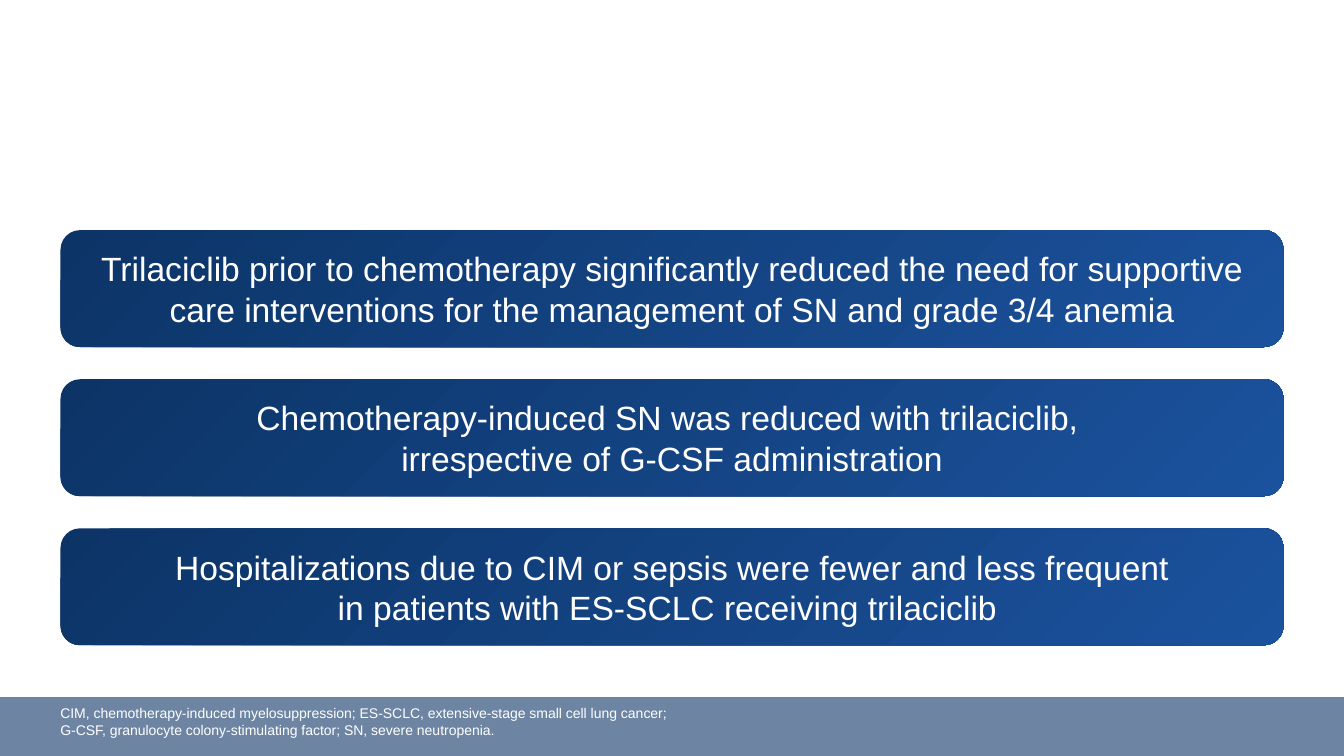
"""Build the slide of three key conclusions about trilaciclib."""
from dataclasses import dataclass

from lxml import etree
from pptx import Presentation
from pptx.dml.color import RGBColor
from pptx.enum.shapes import MSO_SHAPE
from pptx.enum.text import MSO_ANCHOR, MSO_AUTO_SIZE, PP_ALIGN
from pptx.oxml.ns import qn
from pptx.util import Pt

RECTANGLE = MSO_SHAPE.RECTANGLE
ROUNDED_RECTANGLE = MSO_SHAPE.ROUNDED_RECTANGLE
TOP, MIDDLE = MSO_ANCHOR.TOP, MSO_ANCHOR.MIDDLE
LEFT, CENTER = PP_ALIGN.LEFT, PP_ALIGN.CENTER
GROW = MSO_AUTO_SIZE.SHAPE_TO_FIT_TEXT
BLANK_LAYOUT = 6

SLIDE_WIDTH, SLIDE_HEIGHT = 960, 540
FOOTER_TOP = 498
CARD_LEFT, CARD_TOP, CARD_HEIGHT, CARD_PITCH = 43.2, 164.4, 83.5, 106.5

CONCLUSIONS = (
    "Trilaciclib prior to chemotherapy significantly reduced the need for supportive "
    "care interventions for the management of SN and grade 3/4 anemia",
    "Chemotherapy-induced SN was reduced with trilaciclib, \n"
    "irrespective of G-CSF administration",
    "Hospitalizations due to CIM or sepsis were fewer and less frequent\n"
    "in patients with ES-SCLC receiving trilaciclib ",
)
ABBREVIATIONS = (
    "CIM, chemotherapy-induced myelosuppression; "
    "ES-SCLC, extensive-stage small cell lung cancer; \n"
    "G-CSF, granulocyte colony-stimulating factor; SN, severe neutropenia."
)


@dataclass(frozen=True)
class Theme:
    """Colours, font and type sizes of the slide."""

    navy: RGBColor = RGBColor(0x0C, 0x34, 0x67)
    blue: RGBColor = RGBColor(0x1B, 0x52, 0x9D)
    white: RGBColor = RGBColor(0xFF, 0xFF, 0xFF)
    font: str = "Arial"
    card_size: float = 24
    footnote_size: float = 10
    footer_opacity: int = 60


THEME = Theme()


def write_text(shape, text, *, size, align=LEFT, anchor=TOP, inset=3.6):
    """Write one white paragraph, with line breaks, into a shape."""
    frame = shape.text_frame
    frame.word_wrap = True
    frame.auto_size = GROW
    frame.vertical_anchor = anchor
    frame.margin_top = frame.margin_bottom = Pt(inset)
    paragraph = frame.paragraphs[0]
    paragraph.alignment = align
    for index, line in enumerate(text.split("\n")):
        if index:
            paragraph.add_line_break()
        run = paragraph.add_run()
        run.text = line
        run.font.name = THEME.font
        run.font.size = Pt(size)
        run.font.color.rgb = THEME.white


def add_panel(slide, kind, left, top, width, height):
    """Add a preset shape without line or shadow."""
    shape = slide.shapes.add_shape(kind, Pt(left), Pt(top), Pt(width), Pt(height))
    shape.shadow.inherit = False
    shape.line.fill.background()
    return shape


def add_footer_band(slide):
    """Add the translucent band along the bottom edge."""
    band = add_panel(slide, RECTANGLE, 0, FOOTER_TOP, SLIDE_WIDTH, SLIDE_HEIGHT - FOOTER_TOP)
    band.fill.solid()
    band.fill.fore_color.rgb = THEME.navy
    color = band.fill._xPr.find(qn("a:solidFill")).find(qn("a:srgbClr"))
    etree.SubElement(color, qn("a:alpha"), val=str(THEME.footer_opacity * 1000))


def add_footnote(slide, text):
    """Add the abbreviations over the footer band."""
    box = slide.shapes.add_textbox(Pt(36), Pt(499.7), Pt(628.6), Pt(31.5))
    write_text(box, text, size=THEME.footnote_size)


def add_card(slide, text, top):
    """Add a rounded gradient card with a centred conclusion."""
    card = add_panel(
        slide, ROUNDED_RECTANGLE, CARD_LEFT, top, SLIDE_WIDTH - 2 * CARD_LEFT, CARD_HEIGHT
    )
    card.fill.gradient()
    card.fill.gradient_angle = 315
    for stop, color in zip(card.fill.gradient_stops, (THEME.navy, THEME.blue)):
        stop.color.rgb = color
    write_text(card, text, size=THEME.card_size, align=CENTER, anchor=MIDDLE, inset=8.64)


def main():
    """Build and save the presentation."""
    presentation = Presentation()
    presentation.slide_width = Pt(SLIDE_WIDTH)
    presentation.slide_height = Pt(SLIDE_HEIGHT)
    slide = presentation.slides.add_slide(presentation.slide_layouts[BLANK_LAYOUT])
    add_footer_band(slide)
    add_footnote(slide, ABBREVIATIONS)
    for index, conclusion in enumerate(CONCLUSIONS):
        add_card(slide, conclusion, CARD_TOP + index * CARD_PITCH)
    presentation.save("out.pptx")


if __name__ == "__main__":
    main()
